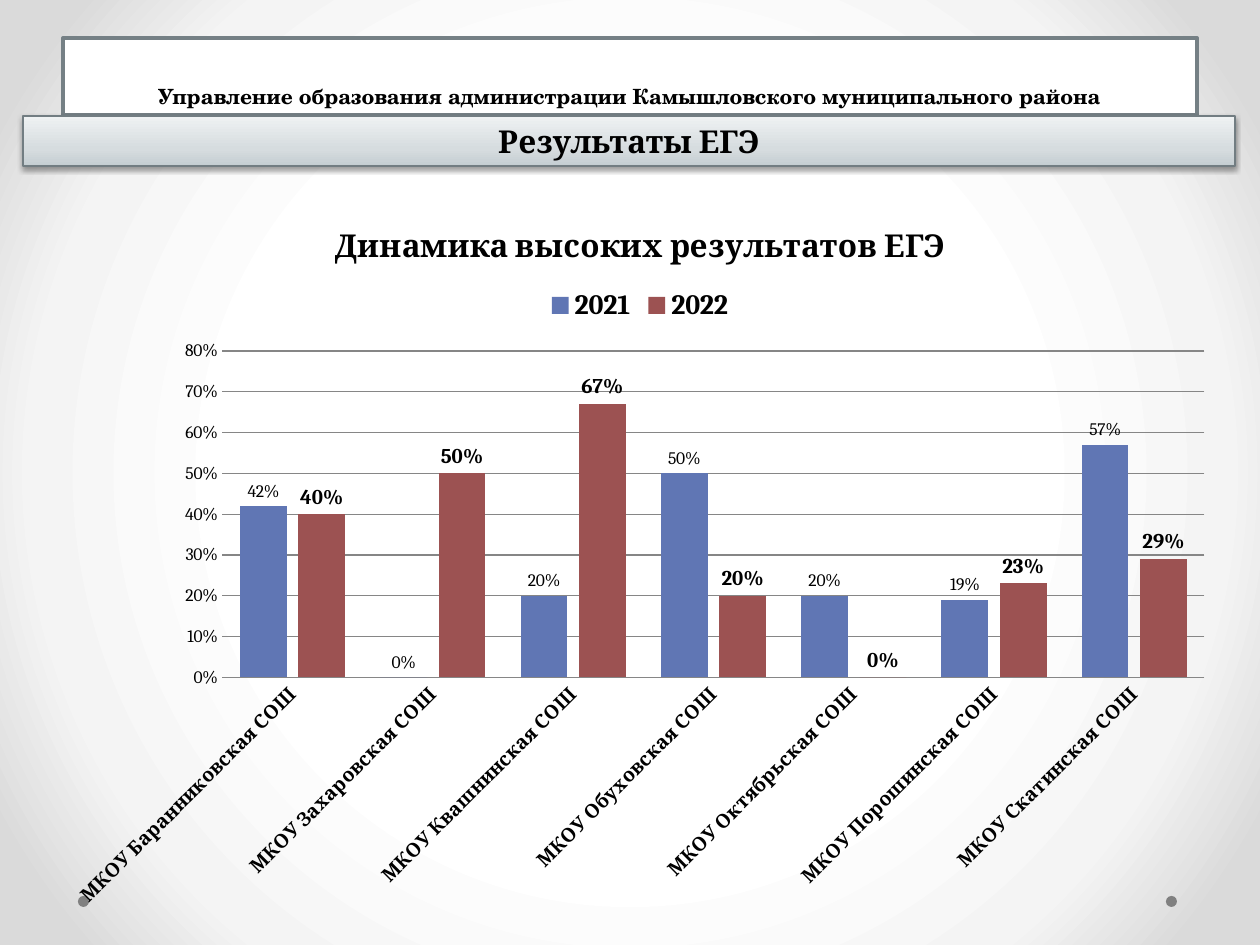
from dataclasses import dataclass

from lxml.etree import SubElement
from pptx import Presentation
from pptx.chart.data import CategoryChartData
from pptx.dml.color import RGBColor
from pptx.enum.chart import XL_CHART_TYPE, XL_LABEL_POSITION, XL_LEGEND_POSITION, XL_TICK_MARK
from pptx.enum.shapes import MSO_SHAPE
from pptx.enum.text import MSO_ANCHOR, MSO_AUTO_SIZE, PP_ALIGN
from pptx.oxml.ns import qn
from pptx.util import Emu, Pt

DEPARTMENT = "Управление образования администрации Камышловского муниципального района"
TOPIC = "Результаты ЕГЭ"
CHART_TITLE = "Динамика высоких результатов ЕГЭ"
SCHOOLS = [
    "МКОУ Баранниковская СОШ", "МКОУ Захаровская СОШ", "МКОУ Квашнинская СОШ",
    "МКОУ Обуховская СОШ", "МКОУ Октябрьская СОШ", "МКОУ Порошинская СОШ",
    "МКОУ Скатинская СОШ",
]
RESULTS = {
    "2021": [0.42, 0, 0.2, 0.5, 0.2, 0.19, 0.57],
    "2022": [0.4, 0.5, 0.67, 0.2, 0, 0.23, 0.29],
}

# Boxes in px: left, top, width, height
SLIDE_SIZE = (1260, 945)
TITLE_BOX = (63, 38, 1134, 77)
BANNER_BOX = (23, 116, 1212, 50)
CHART_BOX = (52, 198, 1176, 724)
DOT_LEFTS, DOT_TOP, DOT_SIZE = (1166, 78), 896, 11


@dataclass(frozen=True)
class Theme:
    font: str = "Cambria"
    title_font: str = "TeX Gyre Schola"
    text: str = "000000"
    paper: str = "FFFFFF"
    title_line: str = "758085"
    banner_line: str = "727D82"
    dot: str = "808080"
    grid: str = "868686"
    series: tuple = ("6076B4", "9C5252")
    label_styles: tuple = ((10, False), (12, True))
    backdrop: tuple = ((50, "FFFFFF"), (76, "F4F4F4"), (92, "DADADA"))
    banner: tuple = ((0, "C5CED2"), (35, "D6DCDF"), (100, "EFF2F3"))
    small: int = 10
    category: int = 11
    title: int = 12
    legend: int = 16
    heading: int = 18


THEME = Theme()


def px(length):
    return Emu(round(length * 914400 / 126))


def place(box):
    return [px(length) for length in box]


def rgb(colour):
    return RGBColor.from_string(colour)


def style(font, size, bold=False, name=THEME.font):
    font.name, font.size, font.bold = name, Pt(size), bold
    font.color.rgb = rgb(THEME.text)


def outline(line, colour, width):
    line.color.rgb = rgb(colour)
    line.width = Pt(width)


def set_gradient(fill, owner, stops, angle=None):
    """Fill with the stops, linear at a clockwise angle or else circular from the centre."""
    fill.gradient()
    gradient = next(owner.iter(qn("a:gradFill")))
    for child in list(gradient):
        gradient.remove(child)
    stop_list = SubElement(gradient, qn("a:gsLst"))
    for position, colour in stops:
        stop = SubElement(stop_list, qn("a:gs"), pos=str(position * 1000))
        SubElement(stop, qn("a:srgbClr"), val=colour)
    if angle is None:
        circle = SubElement(gradient, qn("a:path"), path="circle")
        sides = {side: "50000" for side in "ltrb"}
        SubElement(circle, qn("a:fillToRect"), **sides)
    else:
        SubElement(gradient, qn("a:lin"), ang=str(angle * 60000), scaled="0")


def add_drop_shadow(shape):
    shape.shadow.inherit = False
    effects = next(shape.element.iter(qn("a:effectLst")))
    shadow = SubElement(effects, qn("a:outerShdw"), blurRad=str(Pt(3.1)),
                        dist=str(Pt(1.6)), dir="5400000", rotWithShape="0")
    colour = SubElement(shadow, qn("a:srgbClr"), val=THEME.text)
    SubElement(colour, qn("a:alpha"), val="38000")


def write_centred(frame, text, size, name=THEME.font):
    paragraph = frame.paragraphs[0]
    paragraph.alignment = PP_ALIGN.CENTER
    run = paragraph.add_run()
    run.text = text
    style(run.font, size, True, name)
    return paragraph


def add_dots(slide):
    for left in DOT_LEFTS:
        dot = slide.shapes.add_shape(
            MSO_SHAPE.OVAL, *place((left, DOT_TOP, DOT_SIZE, DOT_SIZE)))
        dot.shadow.inherit = False
        dot.fill.solid()
        dot.fill.fore_color.rgb = rgb(THEME.dot)
        dot.line.fill.background()


def format_title(title):
    title.left, title.top, title.width, title.height = place(TITLE_BOX)
    title.fill.solid()
    title.fill.fore_color.rgb = rgb(THEME.paper)
    outline(title.line, THEME.title_line, 2.25)
    frame = title.text_frame
    frame.word_wrap = True
    frame.auto_size = MSO_AUTO_SIZE.NONE
    frame.vertical_anchor = MSO_ANCHOR.BOTTOM
    paragraph = write_centred(frame, DEPARTMENT, THEME.title, THEME.title_font)
    paragraph.line_spacing = Pt(58)


def add_banner(slide):
    banner = slide.shapes.add_shape(MSO_SHAPE.RECTANGLE, *place(BANNER_BOX))
    set_gradient(banner.fill, banner.element, THEME.banner, 270)
    outline(banner.line, THEME.banner_line, 0.75)
    add_drop_shadow(banner)
    banner.text_frame.word_wrap = True
    banner.text_frame.auto_size = MSO_AUTO_SIZE.SHAPE_TO_FIT_TEXT
    write_centred(banner.text_frame, TOPIC, THEME.heading)


def format_axes(chart):
    schools, share = chart.category_axis, chart.value_axis
    for axis, size, bold in ((schools, THEME.category, True), (share, THEME.small, False)):
        axis.major_tick_mark = axis.minor_tick_mark = XL_TICK_MARK.NONE
        style(axis.tick_labels.font, size, bold)
    outline(schools.format.line, THEME.grid, 0.75)
    label_body = next(schools.tick_labels.font._element.iterancestors(qn("c:txPr"))).find(qn("a:bodyPr"))
    label_body.set("rot", str(-45 * 60000))
    share.minimum_scale, share.maximum_scale, share.major_unit = 0, 0.8, 0.1
    share.tick_labels.number_format = "0%"
    share.tick_labels.number_format_is_linked = False
    share.format.line.fill.background()
    outline(share.major_gridlines.format.line, THEME.grid, 0.75)


def add_results_chart(slide):
    data = CategoryChartData(number_format="0%")
    data.categories = SCHOOLS
    for year, values in RESULTS.items():
        data.add_series(year, values)
    chart = slide.shapes.add_chart(
        XL_CHART_TYPE.COLUMN_CLUSTERED, *place(CHART_BOX), data).chart
    style(chart.font, THEME.small)
    chart.has_title = True
    write_centred(chart.chart_title.text_frame, CHART_TITLE, THEME.heading)
    chart.chart_title.include_in_layout = False
    chart.has_legend = True
    chart.legend.position = XL_LEGEND_POSITION.TOP
    chart.legend.include_in_layout = False
    style(chart.legend.font, THEME.legend, True)
    format_axes(chart)

    plot = chart.plots[0]
    plot.gap_width, plot.overlap, plot.vary_by_categories = 75, -25, False
    for series, colour, label_style in zip(plot.series, THEME.series, THEME.label_styles):
        series.invert_if_negative = False
        series.format.fill.solid()
        series.format.fill.fore_color.rgb = rgb(colour)
        labels = series.data_labels
        labels.show_value = True
        labels.number_format, labels.number_format_is_linked = "0%", False
        labels.position = XL_LABEL_POSITION.OUTSIDE_END
        style(labels.font, *label_style)


def main():
    deck = Presentation()
    deck.slide_width, deck.slide_height = place(SLIDE_SIZE)
    slide = deck.slides.add_slide(deck.slide_layouts[5])
    set_gradient(slide.background.fill, slide.element, THEME.backdrop)
    add_dots(slide)
    format_title(slide.shapes.title)
    add_banner(slide)
    add_results_chart(slide)
    deck.save("out.pptx")


if __name__ == "__main__":
    main()
